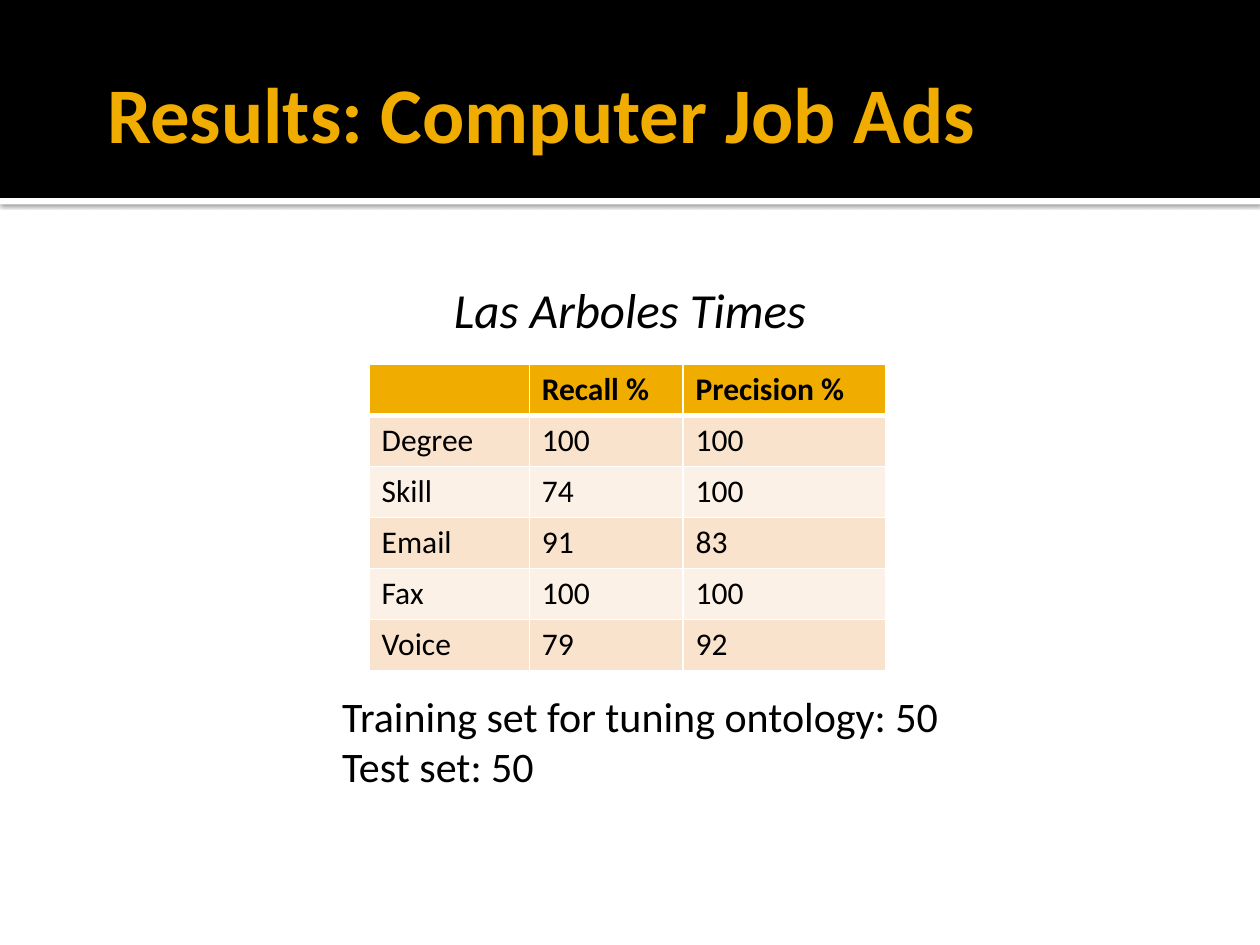
from lxml.etree import SubElement
from pptx import Presentation
from pptx.dml.color import RGBColor as RGB
from pptx.enum.shapes import MSO_SHAPE as SHAPE
from pptx.enum.text import MSO_ANCHOR as ANCHOR, MSO_AUTO_SIZE as FIT, PP_ALIGN as ALIGN
from pptx.oxml import parse_xml
from pptx.oxml.ns import nsdecls, qn
from pptx.util import Cm, Pt

THEME = {
    "font": "Calibri",
    "black": RGB(0, 0, 0),
    "white": RGB(255, 255, 255),
    "gold": RGB(0xF0, 0xAD, 0x00),
    "bands": (RGB(0xFC, 0xF1, 0xE7), RGB(0xF9, 0xE3, 0xCC)),
    "title": Pt(45), "subtitle": Pt(28), "note": Pt(24), "cell": Pt(18),
}


def write(p, text, color="black", **fmt):
    r = p.add_run()
    r.text = text
    r.font.color.rgb = THEME[color]
    for name, value in {"name": THEME["font"], **fmt}.items():
        setattr(r.font, name, value)


def add_borders(cell, widths):
    """Put solid white lines, with widths in points, on the named sides of a cell."""
    tcPr = cell._tc.get_or_add_tcPr()
    for i, (side, width) in enumerate(widths.items()):
        ln = parse_xml(f'<a:{side} {nsdecls("a")} w="{Pt(width)}"/>')
        fill = SubElement(ln, qn("a:solidFill"))
        SubElement(fill, qn("a:srgbClr"), val=str(THEME["white"]))
        tcPr.insert(i, ln)


prs = Presentation()
prs.slide_width, prs.slide_height = Cm(25.4), Cm(19.05)
s = prs.slides.add_slide(prs.slide_layouts[5])

# Header band and the white strip that casts a shadow below it
for top, height, color in ((3.99, 0.13, "white"), (0, 3.99, "black")):
    sp = s.shapes.add_shape(SHAPE.RECTANGLE, 0, Cm(top), prs.slide_width, Cm(height))
    sp.shadow.inherit = False
    sp.fill.solid()
    sp.fill.fore_color.rgb = THEME[color]
    sp.line.fill.background()
    if color == "white":
        effects = sp.element.spPr.find(qn("a:effectLst"))
        shadow = SubElement(effects, qn("a:outerShdw"), blurRad=str(Pt(2.5)),
                            dist=str(Pt(0.8)), dir="5400000", rotWithShape="0")
        tone = SubElement(shadow, qn("a:srgbClr"), val=str(THEME["black"]))
        SubElement(tone, qn("a:alpha"), val="60000")

# Title, in front of the band
title = s.shapes.title
sp.element.addnext(title.element)
title.left, title.top, title.width, title.height = Cm(1.91), Cm(0.66), Cm(21.59), Cm(3.18)
tf = title.text_frame
for name, value in {"margin_left": Cm(0.25), "margin_right": Cm(0.13),
                    "margin_top": Cm(0.13), "margin_bottom": Cm(0.13),
                    "vertical_anchor": ANCHOR.MIDDLE, "auto_size": FIT.NONE}.items():
    setattr(tf, name, value)
tf.paragraphs[0].alignment = ALIGN.LEFT
write(tf.paragraphs[0], "Results: Computer Job Ads", "gold", size=THEME["title"], bold=True)

# Notes below the table and newspaper name above it
NOTES = ("Training set for tuning ontology: 50", "Test set: 50")
texts = (
    ((6.65, 13.79, 12.85, 2.31), NOTES, False, ALIGN.LEFT, {"size": THEME["note"]}),
    ((0, 5.51, 25.4, 1.45), ("Las Arboles Times",), True, ALIGN.CENTER,
     {"size": THEME["subtitle"], "italic": True}),
)
for box, lines, wrap, align, fmt in texts:
    tf = s.shapes.add_textbox(*map(Cm, box)).text_frame
    tf.word_wrap = wrap
    tf.auto_size = FIT.SHAPE_TO_FIT_TEXT
    for i, line in enumerate(lines):
        p = tf.add_paragraph() if i else tf.paragraphs[0]
        p.alignment = align
        write(p, line, **fmt)

# Results table
ROWS = (
    ("", "Recall %", "Precision %"),
    ("Degree", "100", "100"),
    ("Skill", "74", "100"),
    ("Email", "91", "83"),
    ("Fax", "100", "100"),
    ("Voice", "79", "92"),
)
COLS = (3.23, 3.1, 4.09)
ROW_HEIGHT = 1.03
table = s.shapes.add_table(len(ROWS), len(COLS), Cm(7.44), Cm(7.34),
                           Cm(sum(COLS)), Cm(ROW_HEIGHT * len(ROWS))).table
for col, width in zip(table.columns, COLS):
    col.width = Cm(width)
for i, row in enumerate(ROWS):
    table.rows[i].height = Cm(ROW_HEIGHT)
    header = i == 0
    for j, text in enumerate(row):
        cell = table.cell(i, j)
        cell.fill.solid()
        cell.fill.fore_color.rgb = THEME["gold"] if header else THEME["bands"][i % 2]
        add_borders(cell, {"lnL": 1, "lnR": 1, "lnT": 3 if i == 1 else 1,
                           "lnB": 3 if header else 1})
        if text:
            write(cell.text_frame.paragraphs[0], text, size=THEME["cell"], bold=header)

prs.save("out.pptx")
